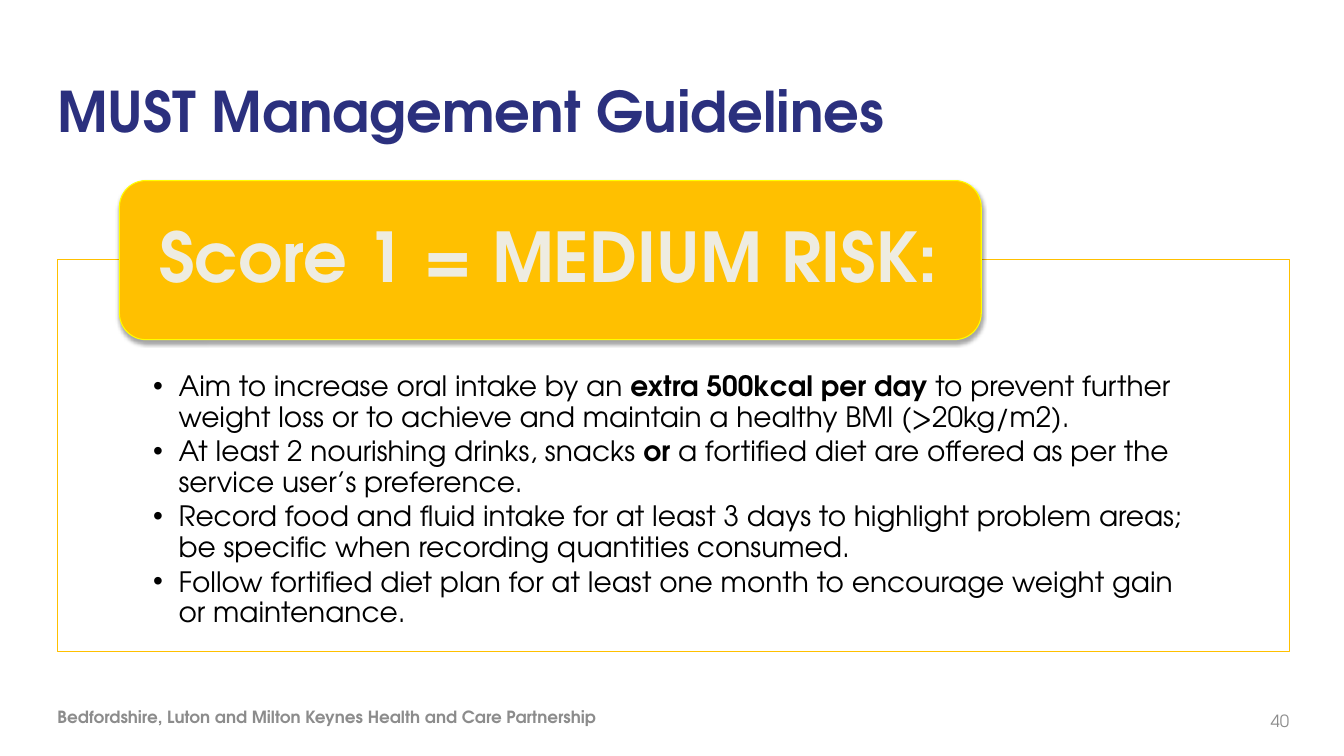
from lxml import etree
from pptx import Presentation
from pptx.dml.color import RGBColor
from pptx.enum import shapes, text
from pptx.oxml.ns import qn
from pptx.util import Cm, Pt

TITLE = "MUST Management Guidelines"
BANNER = "Score 1 = MEDIUM RISK:"
FOOTER = "Bedfordshire, Luton and Milton Keynes Health and Care Partnership"
PAGE = "40"
# Each guideline is a list of (text, bold) pieces.
GUIDELINES = [
    [("Aim to increase oral intake by an ", False),
     ("extra 500kcal per day", True),
     (" to prevent further weight loss or to achieve and maintain "
      "a healthy BMI (>20kg/m2).", False)],
    [("At least 2 nourishing drinks, snacks ", False),
     ("or", True),
     (" a fortified diet are offered as per the service user’s preference.", False)],
    [("Record food and fluid intake for at least 3 days to highlight problem areas; "
      "be specific when recording quantities consumed.", False)],
    [("Follow fortified diet plan for at least one month to encourage "
      "weight gain or maintenance.", False)],
]

THEME = {
    "font": "TeX Gyre Adventor",
    "navy": "2B307E", "grey": "8C8C8C", "black": "000000", "white": "FFFFFF",
    "amber": "FFC000", "yellow": "FFFF00", "cream": "EEECE1",
    "title": 40, "banner": 49, "body": 20, "small": 12,
}

LEFT, WIDTH = 1.45, 31.04
PAGE_WIDTH = 1.35
HANG = 0.64


def add_run(p, words, size, color, bold=False):
    r = p.add_run()
    r.text = words
    r.font.name = THEME["font"]
    r.font.size = Pt(THEME[size])
    r.font.bold = bold
    r.font.color.rgb = RGBColor.from_string(THEME[color])


def set_frame(sp, insets=(0, 0, 0, 0), anchor=text.MSO_ANCHOR.MIDDLE):
    tf = sp.text_frame
    tf.word_wrap = True
    tf.vertical_anchor = anchor
    tf.margin_left, tf.margin_top, tf.margin_right, tf.margin_bottom = map(Cm, insets)
    return tf


def add_label(s, box, words, size, color, bold=False, align=text.PP_ALIGN.LEFT):
    p = set_frame(s.shapes.add_textbox(*map(Cm, box))).paragraphs[0]
    p.alignment = align
    add_run(p, words, size, color, bold)


def add_panel(s, kind, box, fill, line):
    sp = s.shapes.add_shape(kind, *map(Cm, box))
    sp.shadow.inherit = False
    sp.fill.solid()
    sp.fill.fore_color.rgb = RGBColor.from_string(THEME[fill])
    sp.line.color.rgb = RGBColor.from_string(THEME[line])
    sp.line.width = Pt(0.75)
    return sp


def set_alpha(color, percent):
    etree.SubElement(color, qn("a:alpha"), val=str(percent * 1000))


def add_drop_shadow(sp):
    effects = sp._element.spPr.find(qn("a:effectLst"))
    shadow = etree.SubElement(
        effects, qn("a:outerShdw"), blurRad=str(Pt(3.1)), dist=str(Pt(1.8)),
        dir=str(90 * 60000), rotWithShape="0")
    set_alpha(etree.SubElement(shadow, qn("a:srgbClr"), val=THEME["black"]), 35)


def add_bullet(p):
    pPr = p._p.get_or_add_pPr()
    pPr.set("marL", str(Cm(HANG)))
    pPr.set("indent", str(-Cm(HANG)))
    etree.SubElement(pPr, qn("a:buFont"), typeface="Arial")
    etree.SubElement(pPr, qn("a:buChar"), char="•")


def add_guidelines(s):
    sp = add_panel(s, shapes.MSO_SHAPE.RECTANGLE, (LEFT, 6.55, WIDTH, 9.86),
                   "white", "amber")
    set_alpha(sp._element.spPr.find(qn("a:solidFill"))[0], 90)
    tf = set_frame(sp, (2.41, 2.84, 2.41, 0.41), text.MSO_ANCHOR.TOP)
    for i, pieces in enumerate(GUIDELINES):
        p = tf.add_paragraph() if i else tf.paragraphs[0]
        add_bullet(p)
        p.alignment = text.PP_ALIGN.LEFT
        p.line_spacing = 0.9
        p.space_after = Pt(3.3)
        for words, bold in pieces:
            add_run(p, words, "body", "black", bold)


def add_banner(s):
    sp = add_panel(s, shapes.MSO_SHAPE.ROUNDED_RECTANGLE, (3.01, 4.55, 21.72, 4.01),
                   "amber", "yellow")
    add_drop_shadow(sp)
    p = set_frame(sp, (0.81, 0, 0.81, 0)).paragraphs[0]
    p.alignment = text.PP_ALIGN.LEFT
    p.line_spacing = 0.9
    add_run(p, BANNER, "banner", "cream", True)


def main():
    prs = Presentation()
    prs.slide_width, prs.slide_height = Cm(33.87), Cm(19.05)
    s = prs.slides.add_slide(prs.slide_layouts[6])
    add_label(s, (LEFT, 1.07, 24.49, 3.43), TITLE, "title", "navy", True)
    add_label(s, (LEFT, 17.55, 20.57, 1.02), FOOTER, "small", "grey", True)
    add_label(s, (LEFT + WIDTH - PAGE_WIDTH, 17.65, PAGE_WIDTH, 1.02), PAGE,
              "small", "grey", align=text.PP_ALIGN.RIGHT)
    add_guidelines(s)
    add_banner(s)
    prs.save("out.pptx")


if __name__ == "__main__":
    main()
